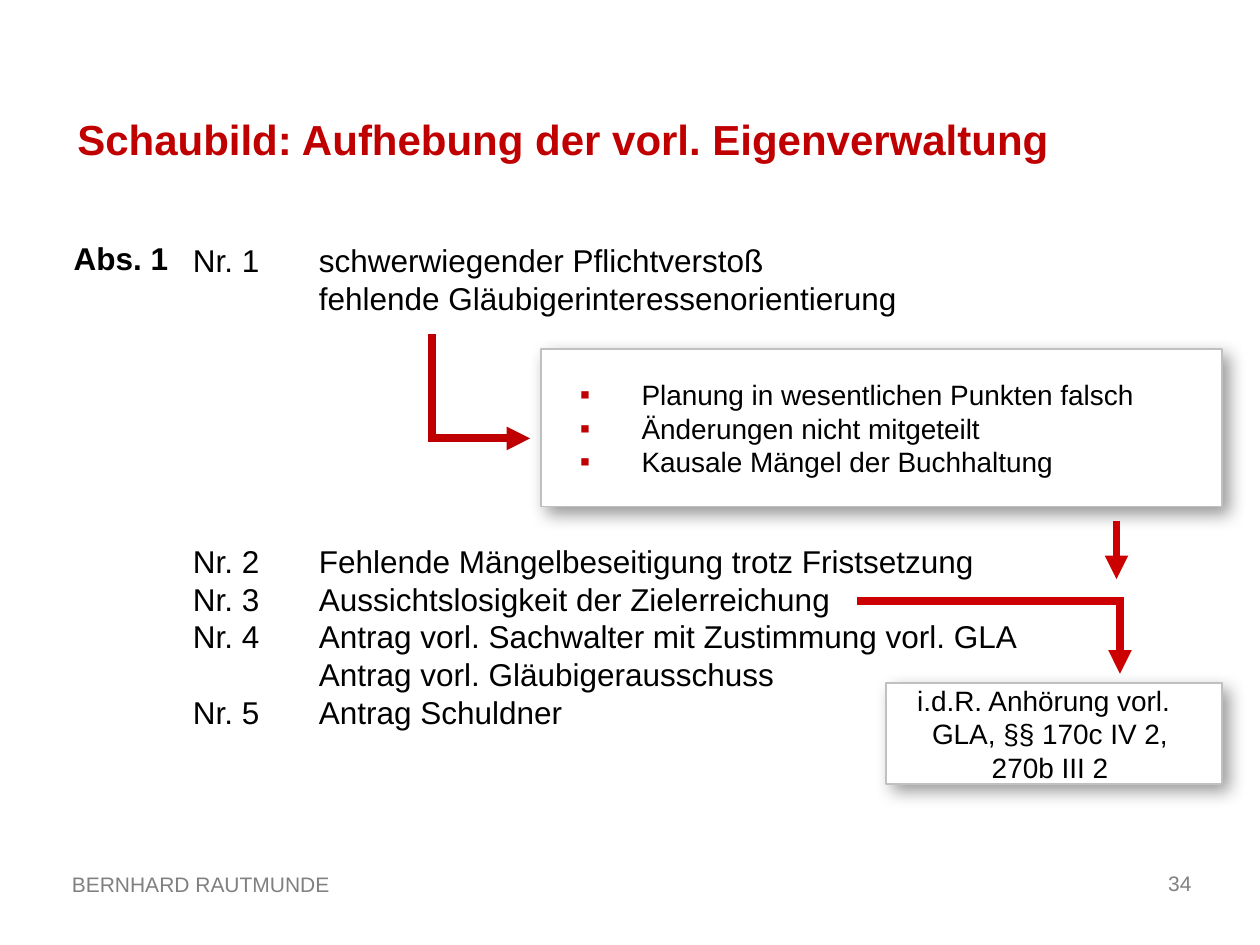
from dataclasses import dataclass

from lxml.etree import SubElement
from pptx import Presentation
from pptx.dml.color import RGBColor
from pptx.enum.shapes import MSO_CONNECTOR, MSO_SHAPE
from pptx.enum.text import MSO_ANCHOR, MSO_AUTO_SIZE, PP_ALIGN
from pptx.oxml.ns import qn
from pptx.util import Pt


@dataclass(frozen=True)
class Theme:
    font: str = "Arial"
    accent: str = "C00000"
    accent_bright: str = "CC0000"
    text: str = "000000"
    muted: str = "808080"
    border: str = "C0C0C0"
    paper: str = "FFFFFF"
    title_size: int = 24
    body_size: int = 18
    note_size: int = 16
    footer_size: int = 12
    arrow_width: float = 4.5
    label_width: int = 72


THEME = Theme()
NOTE_INSETS = (8.6, 5.8, 28, 5.8)
TEXT_INSETS = (7.2, 3.6, 7.2, 3.6)


def color(value):
    return RGBColor.from_string(value)


def place(shape, box):
    shape.left, shape.top, shape.width, shape.height = map(Pt, box)


def prepare_frame(shape, anchor=MSO_ANCHOR.TOP, insets=TEXT_INSETS):
    frame = shape.text_frame
    frame.word_wrap = True
    frame.auto_size = MSO_AUTO_SIZE.NONE
    frame.vertical_anchor = anchor
    (frame.margin_left, frame.margin_top,
     frame.margin_right, frame.margin_bottom) = map(Pt, insets)
    return frame


def add_paragraph(frame, text, size, ink=THEME.text, bold=False,
                  align=PP_ALIGN.LEFT, margin=0, indent=0, bullet=None):
    """Fill the first empty paragraph, or append a new one."""
    first = frame.paragraphs[0]
    paragraph = frame.add_paragraph() if first.runs else first
    paragraph.alignment = align
    paragraph.space_before = Pt(0)
    run = paragraph.add_run()
    run.text = text
    run.font.name = THEME.font
    run.font.size = Pt(size)
    run.font.bold = bold
    run.font.color.rgb = color(ink)

    # Indents and bullet
    properties = paragraph._p.get_or_add_pPr()
    properties.set("marL", str(Pt(margin)))
    properties.set("indent", str(Pt(indent)))
    if bullet:
        bullet_color = SubElement(properties, qn("a:buClr"))
        SubElement(bullet_color, qn("a:srgbClr"), val=THEME.accent)
        SubElement(properties, qn("a:buSzPct"), val="105000")
        SubElement(properties, qn("a:buFont"), typeface=THEME.font)
        SubElement(properties, qn("a:buChar"), char=bullet)
    else:
        SubElement(properties, qn("a:buNone"))
    return paragraph


def add_title(slide, box, text):
    place(slide.shapes.title, box)
    frame = prepare_frame(slide.shapes.title)
    add_paragraph(frame, text, THEME.title_size, THEME.accent, bold=True)


def add_section_label(slide, box, text):
    shape = slide.shapes.add_textbox(*map(Pt, box))
    add_paragraph(prepare_frame(shape), text, THEME.body_size, bold=True)


def fill_numbered_list(placeholder, box, entries):
    """Hang each entry behind its label; unlabelled entries align with it."""
    place(placeholder, box)
    frame = prepare_frame(placeholder)
    for label, entry in entries:
        text = f"{label}\t{entry}" if label else entry
        add_paragraph(frame, text, THEME.body_size, margin=THEME.label_width,
                      indent=-THEME.label_width if label else 0)


def add_note_box(slide, box):
    """Add a bordered box with a soft shadow and return its text frame."""
    shape = slide.shapes.add_shape(MSO_SHAPE.RECTANGLE, *map(Pt, box))
    shape.shadow.inherit = False
    shape.fill.solid()
    shape.fill.fore_color.rgb = color(THEME.paper)
    shape.line.color.rgb = color(THEME.border)
    shape.line.width = Pt(1)
    effects = shape._element.spPr.find(qn("a:effectLst"))
    shadow = SubElement(effects, qn("a:outerShdw"), blurRad=str(Pt(10)),
                        dist=str(Pt(5)), dir="2700000", algn="tl",
                        rotWithShape="0")
    shade = SubElement(shadow, qn("a:srgbClr"), val="000000")
    SubElement(shade, qn("a:alpha"), val="40000")
    return prepare_frame(shape, MSO_ANCHOR.MIDDLE, NOTE_INSETS)


def add_bullet_note(slide, box, items):
    frame = add_note_box(slide, box)
    for item in items:
        add_paragraph(frame, item, THEME.note_size, margin=49, indent=-35.3,
                      bullet="▪")


def add_hearing_note(slide, box, text):
    add_paragraph(add_note_box(slide, box), text, THEME.note_size,
                  align=PP_ALIGN.CENTER, margin=14.4, indent=-7.2)


def add_line(slide, start, end, ink, arrow=False):
    line = slide.shapes.add_connector(MSO_CONNECTOR.STRAIGHT,
                                      *map(Pt, (*start, *end)))
    line.line.color.rgb = color(ink)
    line.line.width = Pt(THEME.arrow_width)
    if arrow:
        SubElement(line.line._get_or_add_ln(), qn("a:tailEnd"), type="triangle")
    SubElement(line._element.spPr, qn("a:effectLst"))


def add_elbow_arrow(slide, start, corner, end, ink):
    """Join two lines, each overlapping the corner by half a line width."""
    overlap = THEME.arrow_width / 2
    if start[0] == corner[0]:
        first_end = (corner[0], corner[1] + overlap)
    else:
        first_end = (corner[0] + overlap, corner[1])
    add_line(slide, start, first_end, ink)
    add_line(slide, corner, end, ink, arrow=True)


def add_footer(slide, name_box, name, number_box, number):
    name_shape = slide.shapes.add_textbox(*map(Pt, name_box))
    paragraph = add_paragraph(prepare_frame(name_shape), name,
                              THEME.footer_size, THEME.muted)
    paragraph.line_spacing = 0.8
    number_shape = slide.shapes.add_textbox(*map(Pt, number_box))
    add_paragraph(prepare_frame(number_shape, MSO_ANCHOR.MIDDLE), number,
                  THEME.footer_size, THEME.muted, align=PP_ALIGN.RIGHT)


def main():
    presentation = Presentation()
    presentation.slide_width, presentation.slide_height = Pt(720), Pt(540)
    slide = presentation.slides.add_slide(presentation.slide_layouts[3])
    first_list, second_list = list(slide.placeholders)[1:3]

    # Heading
    add_title(slide, (37, 61, 660, 36),
              "Schaubild: Aufhebung der vorl. Eigenverwaltung")
    add_section_label(slide, (35, 133, 70, 29), "Abs. 1")

    # Grounds for revocation
    fill_numbered_list(first_list, (103, 134, 607, 51), [
        ("Nr. 1", "schwerwiegender Pflichtverstoß"),
        ("", "fehlende Gläubigerinteressenorientierung"),
    ])
    fill_numbered_list(second_list, (103, 306, 607, 117), [
        ("Nr. 2", "Fehlende Mängelbeseitigung trotz Fristsetzung"),
        ("Nr. 3", "Aussichtslosigkeit der Zielerreichung"),
        ("Nr. 4", "Antrag vorl. Sachwalter mit Zustimmung vorl. GLA"),
        ("", "Antrag vorl. Gläubigerausschuss"),
        ("Nr. 5", "Antrag Schuldner"),
    ])

    # Notes
    add_bullet_note(slide, (309, 199.5, 389.5, 90), [
        "Planung in wesentlichen Punkten falsch",
        "Änderungen nicht mitgeteilt",
        "Kausale Mängel der Buchhaltung",
    ])
    add_hearing_note(slide, (506.5, 390.5, 192, 57.5),
                     "i.d.R. Anhörung vorl. GLA, §§ 170c IV 2, 270b III 2")

    # Arrows
    add_elbow_arrow(slide, (247, 191), (247, 250.5), (303, 250.5), THEME.accent)
    add_elbow_arrow(slide, (490, 343.5), (640, 343.5), (640, 385),
                    THEME.accent_bright)
    add_line(slide, (638, 298), (638, 331), THEME.accent_bright, arrow=True)

    # Footer
    add_footer(slide, (34, 497, 204, 19), "BERNHARD RAUTMUNDE",
               (647, 486, 41, 37.5), "34")
    presentation.save("out.pptx")


if __name__ == "__main__":
    main()
